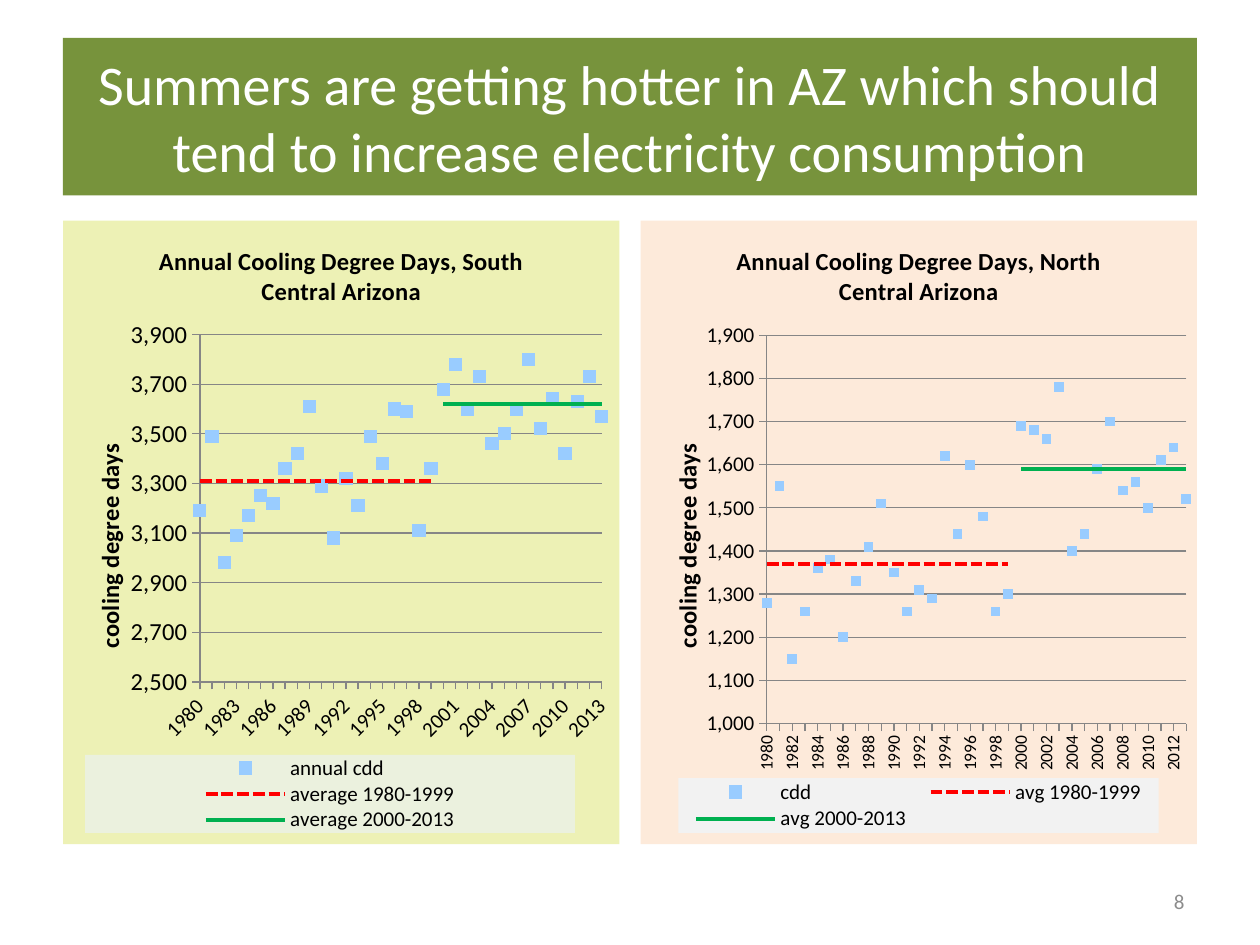
from pptx import Presentation
from pptx.chart.data import CategoryChartData
from pptx.dml.color import RGBColor
from pptx.enum import chart as ch, dml, shapes, text
from pptx.oxml import parse_xml
from pptx.oxml.ns import nsdecls, qn
from pptx.util import Pt

GREEN_BAND = RGBColor(0x77, 0x93, 0x3C)
LIME = RGBColor(0xED, 0xF1, 0xB5)
PEACH = RGBColor(0xFD, 0xEA, 0xDA)
LEGEND_GREEN = RGBColor(0xEB, 0xF1, 0xDE)
LEGEND_GRAY = RGBColor(0xF2, 0xF2, 0xF2)
SKY = RGBColor(0x99, 0xCC, 0xFF)
RED = RGBColor(0xFF, 0x00, 0x00)
GREEN = RGBColor(0x00, 0xB0, 0x50)
GRID_GRAY = RGBColor(0x86, 0x86, 0x86)
NUMBER_GRAY = RGBColor(0x8C, 0x8C, 0x8C)
WHITE = RGBColor(0xFF, 0xFF, 0xFF)
BLACK = RGBColor(0x00, 0x00, 0x00)

FONT = "Calibri"
YEARS = range(1980, 2014)
EARLY, LATE = 20, 14

SOUTH = dict(
    title="Annual Cooling Degree Days, South Central Arizona",
    days=[3190, 3490, 2980, 3090, 3170, 3250, 3220, 3360, 3420, 3610, 3290, 3080,
          3320, 3210, 3490, 3380, 3600, 3590, 3110, 3360, 3680, 3780, 3600, 3730,
          3460, 3500, 3600, 3800, 3520, 3640, 3420, 3630, 3730, 3570],
    averages=(3310, 3620),
    names=("annual cdd", "average 1980-1999", "average 2000-2013"),
    fill=LIME, legend_fill=LEGEND_GREEN, marker_size=7,
    scale=dict(minimum_scale=2500, maximum_scale=3900, major_unit=200),
    value_size=14, year_size=12, year_angle=-45, year_step=3,
    plot=(0.246, 0.183, 0.722, 0.557), legend=(0.04, 0.857, 0.88, 0.125),
)
NORTH = dict(
    title="Annual Cooling Degree Days, North Central Arizona",
    days=[1280, 1550, 1150, 1260, 1360, 1380, 1200, 1330, 1410, 1510, 1350, 1260,
          1310, 1290, 1620, 1440, 1600, 1480, 1260, 1300, 1690, 1680, 1660, 1780,
          1400, 1440, 1590, 1700, 1540, 1560, 1500, 1610, 1640, 1520],
    averages=(1370, 1590),
    names=("cdd", "avg 1980-1999", "avg 2000-2013"),
    fill=PEACH, legend_fill=LEGEND_GRAY, marker_size=5,
    scale=dict(minimum_scale=1000, maximum_scale=1900, major_unit=100),
    value_size=12, year_size=10, year_angle=-90, year_step=2,
    plot=(0.227, 0.184, 0.754, 0.623), legend=(0.068, 0.894, 0.863, 0.088),
)


def set_all(target, **values):
    for name, value in values.items():
        setattr(target, name, value)


def set_font(font, size, color=BLACK, bold=False):
    set_all(font, name=FONT, size=Pt(size), bold=bold)
    font.color.rgb = color


def write(shape, words, size, color, align):
    frame = shape.text_frame
    set_all(frame, word_wrap=True, vertical_anchor=text.MSO_ANCHOR.MIDDLE, text=words)
    paragraph = frame.paragraphs[0]
    paragraph.alignment = align
    set_font(paragraph.runs[0].font, size, color)


def chart_part(tag, inner="", val=None):
    attribute = "" if val is None else f' val="{val}"'
    return parse_xml(f'<c:{tag} {nsdecls("c", "a")}{attribute}>{inner}</c:{tag}>')


def place(element, box, after=None, inner_plot=False):
    """Give a chart element a manual layout, as fractions of the chart."""
    for old in element.findall(qn("c:layout")):
        element.remove(old)
    target = '<c:layoutTarget val="inner"/>' if inner_plot else ""
    modes = '<c:xMode val="edge"/><c:yMode val="edge"/>'
    numbers = "".join(f'<c:{k} val="{v}"/>' for k, v in zip("xywh", box))
    layout = chart_part("layout", f"<c:manualLayout>{target}{modes}{numbers}</c:manualLayout>")
    if after:
        element.find(qn(after)).addnext(layout)
    else:
        element.insert(0, layout)


def solid_fill(color):
    return chart_part("spPr", f'<a:solidFill><a:srgbClr val="{color}"/></a:solidFill>'
                              '<a:ln><a:noFill/></a:ln>')


def add_title(slide, left, top, width, height):
    band = slide.shapes.add_shape(shapes.MSO_SHAPE.RECTANGLE, left, top, width, height)
    band.shadow.inherit = False
    band.fill.solid()
    band.fill.fore_color.rgb = GREEN_BAND
    band.line.fill.background()
    write(band, "Summers are getting hotter in AZ which should tend to increase "
                "electricity consumption", 32, WHITE, text.PP_ALIGN.CENTER)


def add_page_number(slide, left, top, width, height):
    number = slide.shapes.add_textbox(left, top, width, height)
    write(number, "8", 12, NUMBER_GRAY, text.PP_ALIGN.RIGHT)


def style_series(plot, marker_size):
    yearly, early, late = plot.series
    yearly.format.line.fill.background()
    set_all(yearly.marker, style=ch.XL_MARKER_STYLE.SQUARE, size=marker_size)
    yearly.marker.format.fill.solid()
    yearly.marker.format.fill.fore_color.rgb = SKY
    yearly.marker.format.line.fill.background()
    for average, color in ((early, RED), (late, GREEN)):
        average.marker.style = ch.XL_MARKER_STYLE.NONE
        average.format.line.color.rgb = color
        average.format.line.width = Pt(2.25)
    early.format.line.dash_style = dml.MSO_LINE.SQUARE_DOT
    for series in plot.series:
        series.smooth = False


def style_axes(chart, region):
    years, values = chart.category_axis, chart.value_axis
    for axis, size in ((years, region["year_size"]), (values, region["value_size"])):
        axis.major_tick_mark = ch.XL_TICK_MARK.OUTSIDE
        axis.format.line.color.rgb = GRID_GRAY
        set_font(axis.tick_labels.font, size)

    years.tick_label_position = ch.XL_TICK_LABEL_POSITION.LOW
    node = years._element
    node.find(qn("c:txPr")).find(qn("a:bodyPr")).set("rot", str(region["year_angle"] * 60000))
    last = node.find(qn("c:noMultiLvlLbl"))
    last.addprevious(chart_part("tickLblSkip", val=region["year_step"]))
    last.addprevious(chart_part("tickMarkSkip", val=1))

    set_all(values, has_major_gridlines=True, **region["scale"])
    values.major_gridlines.format.line.color.rgb = GRID_GRAY
    set_all(values.tick_labels, number_format="#,##0", number_format_is_linked=False)
    title = values.axis_title
    title.text_frame.text = "cooling degree days"
    set_font(title.text_frame.paragraphs[0].runs[0].font, 14, bold=True)
    place(title._element, (0.045, 0.35), after="c:tx")
    node = values._element
    for old in node.findall(qn("c:crossBetween")):
        node.remove(old)
    node.find(qn("c:crosses")).addnext(chart_part("crossBetween", val="midCat"))


def add_degree_chart(slide, region, left, top, width, height):
    before, after = region["averages"]
    columns = (region["days"],
               [before] * EARLY + [None] * LATE,
               [None] * EARLY + [after] * LATE)
    data = CategoryChartData(number_format="#,##0")
    data.categories = [str(year) for year in YEARS]
    for name, column in zip(region["names"], columns):
        data.add_series(name, column)
    chart = slide.shapes.add_chart(
        ch.XL_CHART_TYPE.LINE_MARKERS, left, top, width, height, data).chart
    set_font(chart.font, 10)
    chart._chartSpace.find(qn("c:chart")).addnext(solid_fill(region["fill"]))

    chart.has_title = True
    heading = chart.chart_title.text_frame
    heading.text = region["title"]
    set_font(heading.paragraphs[0].runs[0].font, 14, bold=True)

    plot = chart.plots[0]
    plot.vary_by_categories = False
    style_series(plot, region["marker_size"])
    style_axes(chart, region)
    place(chart._chartSpace.chart.plotArea, region["plot"], inner_plot=True)

    chart.has_legend = True
    legend = chart.legend
    set_all(legend, position=ch.XL_LEGEND_POSITION.BOTTOM, include_in_layout=False)
    set_font(legend.font, 12)
    place(legend._element, region["legend"], after="c:legendPos")
    legend._element.find(qn("c:overlay")).addnext(solid_fill(region["legend_fill"]))


def main():
    deck = Presentation()
    set_all(deck, slide_width=Pt(720), slide_height=Pt(540))
    slide = deck.slides.add_slide(deck.slide_layouts[6])
    margin, gap = 36, 12
    content = 720 - 2 * margin
    chart_width = (content - gap) / 2
    add_title(slide, Pt(margin), Pt(21.6), Pt(content), Pt(90))
    for i, region in enumerate((SOUTH, NORTH)):
        left = margin + i * (chart_width + gap)
        add_degree_chart(slide, region, Pt(left), Pt(126), Pt(chart_width), Pt(356.4))
    add_page_number(slide, Pt(516), Pt(500.4), Pt(168), Pt(28.8))
    deck.save("out.pptx")


if __name__ == "__main__":
    main()
